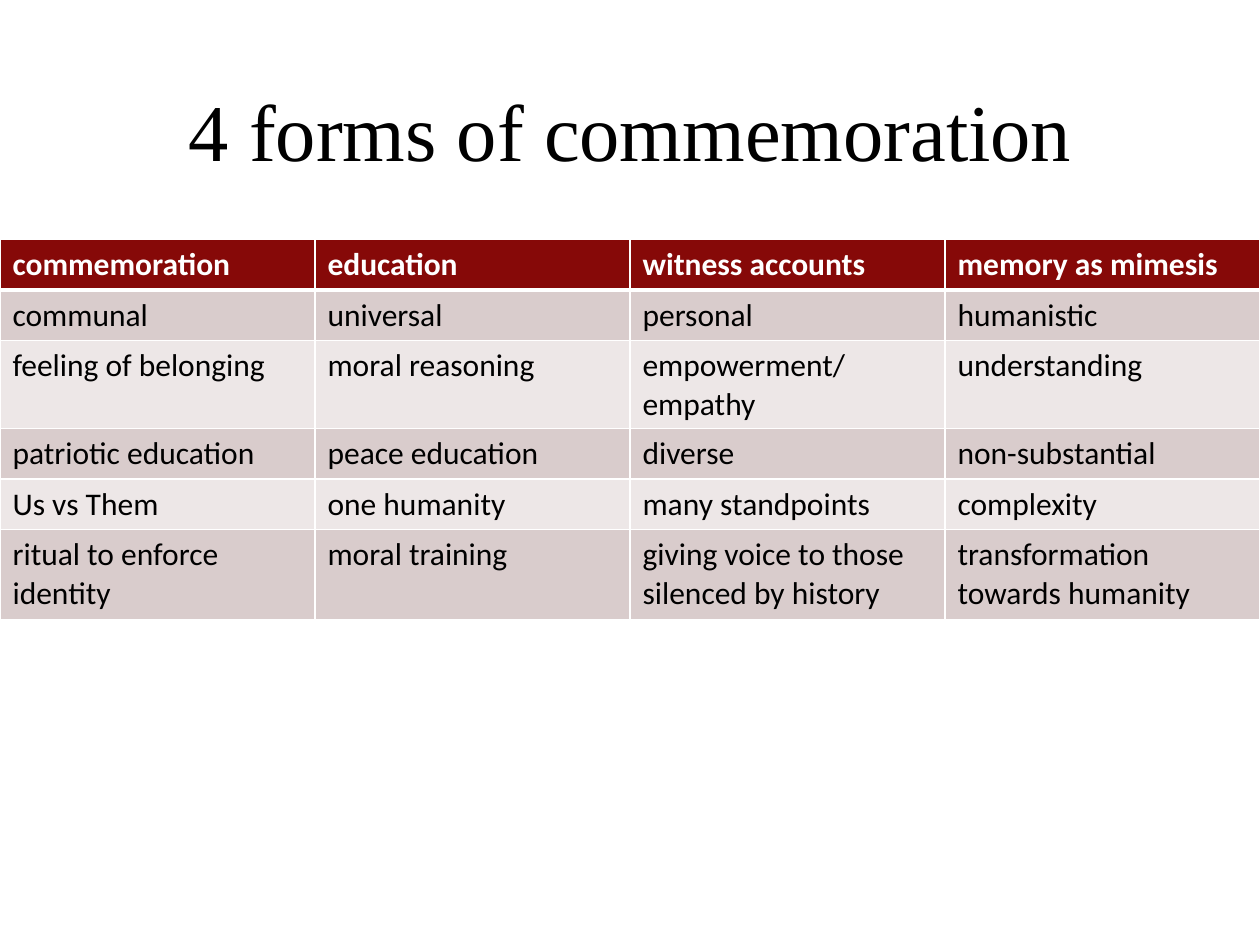
from lxml import etree
from pptx import Presentation
from pptx import util as u
from pptx.dml.color import RGBColor
from pptx.enum import text
from pptx.oxml import ns

BLACK = RGBColor(0x00, 0x00, 0x00)
WHITE = RGBColor(0xFF, 0xFF, 0xFF)
HEADER_RED = RGBColor(0x86, 0x09, 0x08)
BAND_DARK = RGBColor(0xD9, 0xCC, 0xCC)
BAND_LIGHT = RGBColor(0xED, 0xE7, 0xE7)

FORMS = [
    ("commemoration", "education", "witness accounts", "memory as mimesis"),
    ("communal", "universal", "personal", "humanistic"),
    ("feeling of belonging", "moral reasoning", "empowerment/empathy", "understanding"),
    ("patriotic education", "peace education", "diverse", "non-substantial"),
    ("Us vs Them", "one humanity", "many standpoints", "complexity"),
    ("ritual to enforce identity", "moral training",
     "giving voice to those silenced by history", "transformation towards humanity"),
]
ROW_HEIGHTS = [0.37, 0.37, 0.64, 0.37, 0.37, 0.72]


def format_font(font, name, size, color, bold=False):
    font.name = name
    font.size = u.Pt(size)
    font.color.rgb = color
    font.bold = bold


def set_borders(cell, top, bottom):
    """Draw white borders; side borders are 1 pt wide."""
    properties = cell._tc.get_or_add_tcPr()
    for tag, width in (("lnL", 1), ("lnR", 1), ("lnT", top), ("lnB", bottom)):
        line = etree.SubElement(properties, ns.qn(f"a:{tag}"), w=str(u.Pt(width)))
        fill = etree.SubElement(line, ns.qn("a:solidFill"))
        etree.SubElement(fill, ns.qn("a:srgbClr"), val=str(WHITE))


def add_title(slide, left, top, width, height, title):
    shape = slide.shapes.add_textbox(left, top, width, height)
    frame = shape.text_frame
    frame.word_wrap = True
    frame.vertical_anchor = text.MSO_ANCHOR.MIDDLE
    frame.text = title
    paragraph = frame.paragraphs[0]
    paragraph.alignment = text.PP_ALIGN.CENTER
    format_font(paragraph.runs[0].font, "Times New Roman", 46, BLACK)


def add_forms_table(slide, left, top, width, height):
    shape = slide.shapes.add_table(len(FORMS), len(FORMS[0]), left, top, width, height)
    table = shape.table
    for row, row_height in zip(table.rows, ROW_HEIGHTS):
        row.height = u.Inches(row_height)

    for row_index, entries in enumerate(FORMS):
        header = row_index == 0
        band = BAND_DARK if row_index % 2 else BAND_LIGHT
        for column_index, entry in enumerate(entries):
            cell = table.cell(row_index, column_index)
            # The rule under the header is heavier than the others
            set_borders(cell, top=3 if row_index == 1 else 1, bottom=3 if header else 1)
            cell.fill.solid()
            cell.fill.fore_color.rgb = HEADER_RED if header else band
            cell.text_frame.text = entry
            format_font(cell.text_frame.paragraphs[0].runs[0].font, "Calibri", 18,
                        WHITE if header else BLACK, bold=header)


def main():
    presentation = Presentation()
    presentation.slide_width = u.Inches(10)
    presentation.slide_height = u.Inches(7.5)
    slide = presentation.slides.add_slide(presentation.slide_layouts[6])

    # Title
    add_title(slide, u.Inches(1), u.Inches(0.55), u.Inches(8), u.Inches(0.95),
              "4 forms of commemoration")
    # Comparison table across the full slide width
    add_forms_table(slide, u.Inches(0), u.Inches(1.9), presentation.slide_width,
                    u.Inches(sum(ROW_HEIGHTS)))

    presentation.save("out.pptx")


if __name__ == "__main__":
    main()
